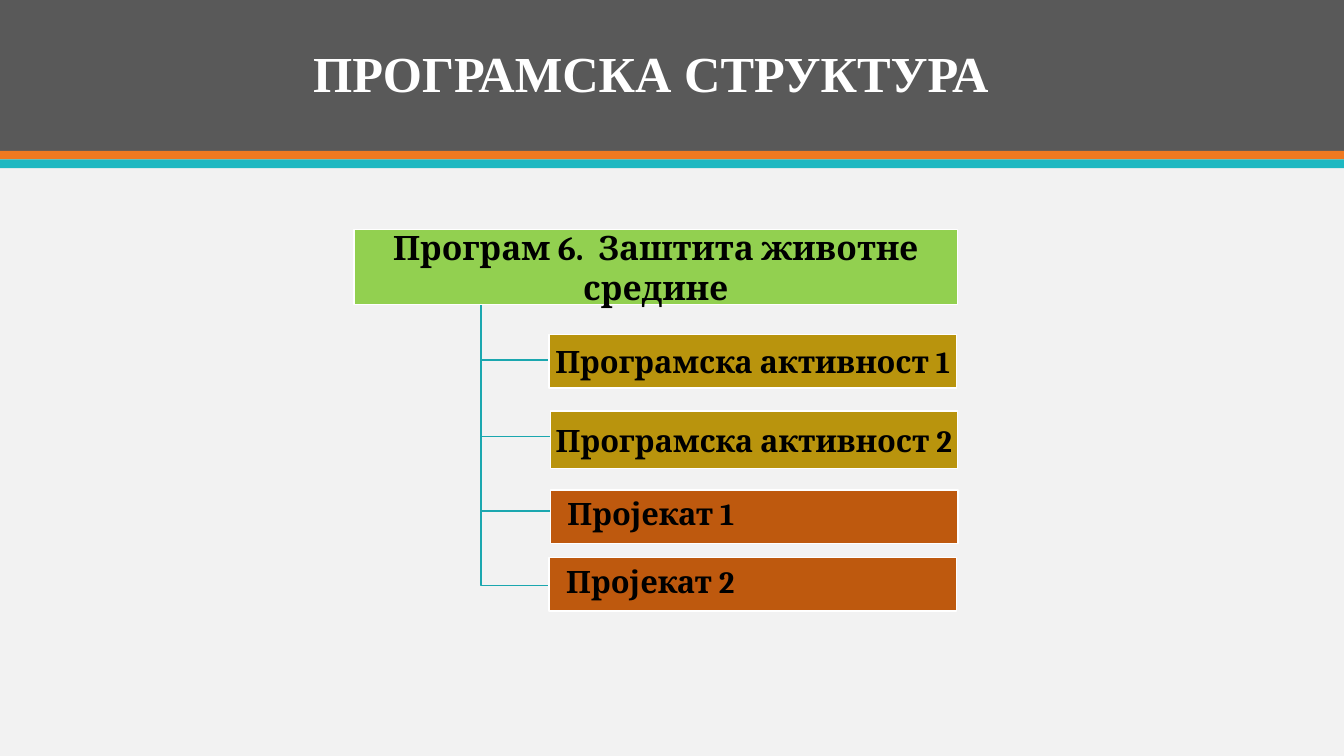
from dataclasses import dataclass

from pptx import Presentation
from pptx.dml.color import RGBColor
from pptx.enum import shapes, text
from pptx.util import Cm, Pt


@dataclass(frozen=True)
class Theme:
    page: str = "F2F2F2"
    header: str = "595959"
    orange: str = "EF7920"
    teal: str = "1EB8C1"
    branch: str = "1BA7AF"
    program: str = "92D050"
    activity: str = "B9940D"
    project: str = "BE590E"
    white: str = "FFFFFF"
    black: str = "000000"
    title_font: str = "Times New Roman"
    box_font: str = "Cambria"
    title_size: int = 36
    program_size: int = 24
    item_size: int = 22


theme = Theme()
color = RGBColor.from_string

deck = Presentation()
deck.slide_width, deck.slide_height = Cm(33.87), Cm(19.05)
slide = deck.slides.add_slide(deck.slide_layouts[5])
slide.background.fill.solid()
slide.background.fill.fore_color.rgb = color(theme.page)


def add_box(left, top, width, height, fill, outline=None):
    """Add a flat rectangle, measured in centimetres."""
    box = slide.shapes.add_shape(
        shapes.MSO_SHAPE.RECTANGLE, Cm(left), Cm(top), Cm(width), Cm(height))
    box.shadow.inherit = False
    box.fill.solid()
    box.fill.fore_color.rgb = color(fill)
    if outline:
        box.line.color.rgb = color(outline)
        box.line.width = Pt(1)
    else:
        box.line.fill.background()
    return box


def write(shape, words, font, size, ink, align):
    shape.text_frame.text = words
    shape.text_frame.word_wrap = True
    paragraph = shape.text_frame.paragraphs[0]
    paragraph.alignment = align
    paragraph.font.name = font
    paragraph.font.size = Pt(size)
    paragraph.font.bold = True
    paragraph.font.color.rgb = color(ink)


# Header bands sit behind the title
title = slide.shapes.title
for top, height, fill in [(0, 3.81, theme.header),
                          (3.8, 0.22, theme.orange),
                          (4.02, 0.22, theme.teal)]:
    band = add_box(0, top, 33.87, height, fill)
    title.element.addprevious(band.element)

title.left, title.top, title.width, title.height = Cm(3.07), Cm(0.53), Cm(26.67), Cm(2.21)
write(title, "ПРОГРАМСКА СТРУКТУРА", theme.title_font, theme.title_size,
      theme.white, text.PP_ALIGN.CENTER)
title.text_frame.vertical_anchor = text.MSO_ANCHOR.BOTTOM
title.text_frame.auto_size = text.MSO_AUTO_SIZE.NONE
title.text_frame.paragraphs[0].line_spacing = 0.9

# Tree branches: each elbow starts where the previous one turned
trunk_x, branch_end = 12.12, 13.86
elbow_top = 7.67
for elbow_bottom in (9.07, 11, 12.88, 14.76):
    builder = slide.shapes.build_freeform(Cm(trunk_x), Cm(elbow_top))
    builder.add_line_segments([(Cm(trunk_x), Cm(elbow_bottom)),
                               (Cm(branch_end), Cm(elbow_bottom))], close=False)
    elbow = builder.convert_to_shape()
    elbow.shadow.inherit = False
    elbow.fill.background()
    elbow.line.color.rgb = color(theme.branch)
    elbow.line.width = Pt(1)
    elbow_top = elbow_bottom

# Program and its activities: centred text with hairline margins
for words, left, top, width, height, fill, size in [
    ("Програм 6.  Заштита животне средине", 8.92, 5.79, 15.21, 1.88,
     theme.program, theme.program_size),
    ("Програмска активност 1", 13.84, 8.43, 10.26, 1.35,
     theme.activity, theme.item_size),
    ("Програмска активност 2", 13.87, 10.36, 10.26, 1.45,
     theme.activity, theme.item_size),
]:
    box = add_box(left, top, width, height, fill, theme.white)
    write(box, words, theme.box_font, size, theme.black, text.PP_ALIGN.CENTER)
    frame = box.text_frame
    frame.vertical_anchor = text.MSO_ANCHOR.MIDDLE
    frame.margin_left = frame.margin_right = Cm(0.03)
    frame.margin_top = frame.margin_bottom = Cm(0.03)

# Projects: text from the top left
for words, left, top in [("Пројекат 1", 13.87, 12.35), ("Пројекат 2", 13.84, 14.05)]:
    box = add_box(left, top, 10.27, 1.35, theme.project, theme.white)
    write(box, words, theme.box_font, theme.item_size, theme.black, text.PP_ALIGN.LEFT)
    box.text_frame.vertical_anchor = text.MSO_ANCHOR.TOP
    box.text_frame.margin_left = Cm(0.43)

deck.save("out.pptx")
